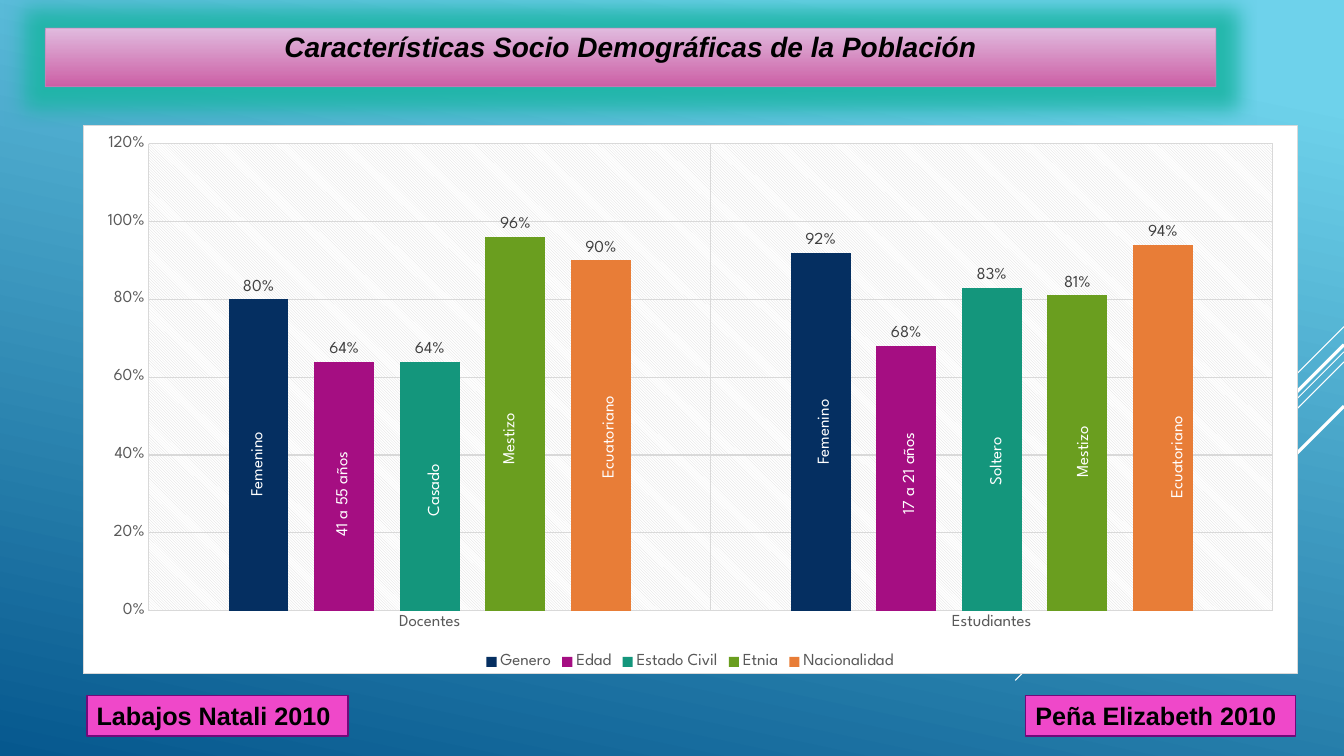
from lxml import etree
from pptx import Presentation
from pptx.chart.data import CategoryChartData
from pptx.dml.color import RGBColor
from pptx.enum.chart import XL_CHART_TYPE, XL_LABEL_POSITION, XL_LEGEND_POSITION, XL_TICK_MARK
from pptx.enum.shapes import MSO_CONNECTOR, MSO_SHAPE
from pptx.enum.text import MSO_ANCHOR, PP_ALIGN
from pptx.oxml import parse_xml
from pptx.oxml.ns import qn
from pptx.util import Pt

COLUMNS = XL_CHART_TYPE.COLUMN_CLUSTERED
OUTSIDE_END = XL_LABEL_POSITION.OUTSIDE_END
LEGEND_BOTTOM = XL_LEGEND_POSITION.BOTTOM
NO_TICK = XL_TICK_MARK.NONE
STRAIGHT = MSO_CONNECTOR.STRAIGHT
RECTANGLE = MSO_SHAPE.RECTANGLE
TOP = MSO_ANCHOR.TOP
MIDDLE = MSO_ANCHOR.MIDDLE
CENTER = PP_ALIGN.CENTER
LEFT = PP_ALIGN.LEFT

EMU_PER_PX = 9144
HEADING_FONT = "Arial"
CHART_FONT = "League Spartan"
NAMESPACES = (
    'xmlns:a="http://schemas.openxmlformats.org/drawingml/2006/main" '
    'xmlns:c="http://schemas.openxmlformats.org/drawingml/2006/chart"'
)
GRID_LINE = '<a:ln w="9525"><a:solidFill><a:srgbClr val="D9D9D9"/></a:solidFill></a:ln>'

STREAKS = [
    (324, 100, 0.75),
    (349, 326, 0.75),
    (359, 207, 0.75),
    (342, 191, 2.25),
    (403, 139, 2.25),
]
SERIES = [
    ("Genero", (0.80, 0.92), "052F61"),
    ("Edad", (0.64, 0.68), "A50E82"),
    ("Estado Civil", (0.64, 0.83), "14967C"),
    ("Etnia", (0.96, 0.81), "6A9E1F"),
    ("Nacionalidad", (0.90, 0.94), "E87D37"),
]
BAR_LABELS = [
    ("Femenino", 203, 437, 101),
    ("41 a 55 años", 269, 458, 138),
    ("Casado", 362, 440, 134),
    ("Mestizo", 453, 405, 101),
    ("Ecuatoriano", 535, 402, 134),
    ("Femenino", 765, 405, 101),
    ("17 a 21 años", 831, 436, 138),
    ("Soltero", 936, 426, 101),
    ("Mestizo", 1022, 418, 101),
    ("Ecuatoriano", 1099, 422, 134),
]


def px(length):
    return length * EMU_PER_PX


def color(value):
    return RGBColor.from_string(value)


def place(box):
    return [px(length) for length in box]


def set_font(font, name, size, value, bold=False, italic=False):
    font.name = name
    font.size = Pt(size)
    font.color.rgb = color(value)
    font.bold = bold
    font.italic = italic


def set_line(line, value, width):
    line.color.rgb = color(value)
    line.width = Pt(width)


def set_gradient(fill, stops, angle):
    fill.gradient()
    fill.gradient_angle = 360 - angle
    for stop, (position, value) in zip(fill.gradient_stops, stops):
        stop.position = position
        stop.color.rgb = color(value)


def write(shape, text, align, anchor, name, size, value, bold=False, italic=False):
    frame = shape.text_frame
    frame.word_wrap = True
    frame.vertical_anchor = anchor
    para = frame.paragraphs[0]
    para.alignment = align
    span = para.add_run()
    span.text = text
    set_font(span.font, name, size, value, bold, italic)
    return para


def add_background(page, right):
    set_gradient(page.background.fill, [(0.1, "6ED2EB"), (1, "06588E")], 102)
    for top, reach, width in STREAKS:
        streak = page.shapes.add_connector(
            STRAIGHT, px(right), px(top), px(right - reach), px(top + reach)
        )
        set_line(streak.line, "FFFFFF", width)
        etree.SubElement(streak.element.spPr, qn("a:effectLst"))


def add_title(page, box):
    title = page.shapes.title
    title.left, title.top, title.width, title.height = place(box)
    set_gradient(title.fill, [(0, "E0BADE"), (1, "CC5FA5")], 90)
    set_line(title.line, "C089BD", 0.75)
    properties = title.element.spPr
    line_color = properties.find(qn("a:ln")).find(".//" + qn("a:srgbClr"))
    etree.SubElement(line_color, qn("a:alpha"), val="60000")
    properties.append(parse_xml(
        f'<a:effectLst {NAMESPACES}><a:glow rad="{px(40)}"><a:srgbClr val="1CB5A5">'
        '<a:alpha val="90000"/></a:srgbClr></a:glow></a:effectLst>'
    ))
    para = write(title, "Características Socio Demográficas de la Población",
                 CENTER, TOP, HEADING_FONT, 20, "000000", True, True)
    para.line_spacing = 0.9
    para.space_before = Pt(10)


def format_axis(axis):
    axis.major_tick_mark = NO_TICK
    axis.minor_tick_mark = NO_TICK
    axis.has_major_gridlines = True
    set_line(axis.major_gridlines.format.line, "D9D9D9", 0.75)
    set_font(axis.tick_labels.font, CHART_FONT, 12, "595959")


def format_areas(chart):
    space = chart.element
    space.find(qn("c:chart")).addnext(parse_xml(
        f'<c:spPr {NAMESPACES}><a:solidFill><a:srgbClr val="FFFFFF"/></a:solidFill>'
        f'{GRID_LINE}</c:spPr>'
    ))
    area = space.find(".//" + qn("c:plotArea"))
    for layout in area.findall(qn("c:layout")):
        area.remove(layout)
    area.insert(0, parse_xml(
        f'<c:layout {NAMESPACES}><c:manualLayout><c:layoutTarget val="inner"/>'
        '<c:xMode val="edge"/><c:yMode val="edge"/><c:x val="0.054"/><c:y val="0.033"/>'
        '<c:w val="0.926"/><c:h val="0.852"/></c:manualLayout></c:layout>'
    ))
    area.append(parse_xml(
        f'<c:spPr {NAMESPACES}><a:pattFill prst="ltDnDiag"><a:fgClr><a:srgbClr val="D9D9D9"/>'
        '</a:fgClr><a:bgClr><a:srgbClr val="FFFFFF"/></a:bgClr></a:pattFill></c:spPr>'
    ))


def add_population_chart(page, box):
    data = CategoryChartData(number_format="0%")
    data.categories = ["Docentes", "Estudiantes"]
    for name, values, _ in SERIES:
        data.add_series(name, values)
    chart = page.shapes.add_chart(COLUMNS, *place(box), data).chart
    set_font(chart.font, CHART_FONT, 10, "FFFFFF")
    chart.has_title = False
    chart.has_legend = True
    chart.legend.position = LEGEND_BOTTOM
    chart.legend.include_in_layout = False
    set_font(chart.legend.font, CHART_FONT, 12, "595959")
    format_axis(chart.category_axis)
    set_line(chart.category_axis.format.line, "D9D9D9", 0.75)
    scale = chart.value_axis
    format_axis(scale)
    scale.format.line.fill.background()
    scale.minimum_scale, scale.maximum_scale, scale.major_unit = 0, 1.2, 0.2
    scale.tick_labels.number_format = "0%"
    scale.tick_labels.number_format_is_linked = False
    plot = chart.plots[0]
    plot.vary_by_categories = False
    plot.gap_width = 267
    plot.overlap = -43
    for series, (_, _, value) in zip(plot.series, SERIES):
        series.format.fill.solid()
        series.format.fill.fore_color.rgb = color(value)
        labels = series.data_labels
        labels.show_value = True
        labels.position = OUTSIDE_END
        labels.number_format = "0%"
        labels.number_format_is_linked = False
        set_font(labels.font, CHART_FONT, 12, "404040")
    format_areas(chart)


def add_author(page, box, text):
    author = page.shapes.add_shape(RECTANGLE, *place(box))
    author.shadow.inherit = False
    author.fill.solid()
    author.fill.fore_color.rgb = color("EF48C9")
    set_line(author.line, "710A7A", 1.25)
    write(author, text, LEFT, TOP, HEADING_FONT, 18, "000000", True)


def add_bar_label(page, box, text):
    label = page.shapes.add_textbox(*place(box))
    label.rotation = 270
    write(label, text, LEFT, MIDDLE, CHART_FONT, 12, "FFFFFF")


def main():
    deck = Presentation()
    deck.slide_width, deck.slide_height = px(1333), px(750)
    page = deck.slides.add_slide(deck.slide_layouts[5])
    add_background(page, 1333)
    add_title(page, (45, 28, 1161, 58))
    add_population_chart(page, (82, 124, 1205, 545))
    add_author(page, (86, 690, 259, 40), "Labajos Natali 2010")
    add_author(page, (1017, 690, 268, 40), "Peña Elizabeth 2010")
    for text, left, top, width in BAR_LABELS:
        add_bar_label(page, (left, top, width, 30), text)
    deck.save("out.pptx")


if __name__ == "__main__":
    main()
